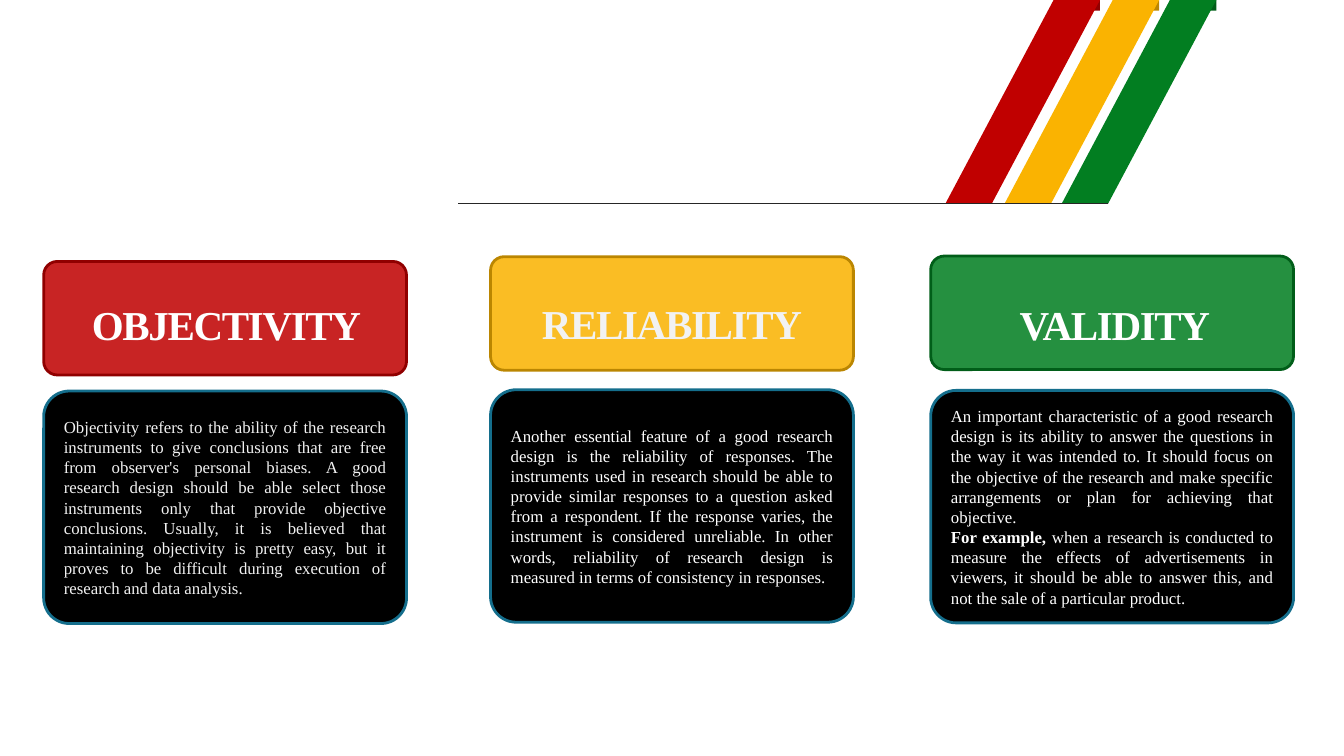
"""Build a slide on objectivity, reliability and validity in research design."""
from lxml import etree
from pptx import Presentation
from pptx.dml.color import RGBColor
from pptx.enum.shapes import MSO_CONNECTOR, MSO_SHAPE
from pptx.enum.text import MSO_ANCHOR, PP_ALIGN
from pptx.oxml.ns import qn
from pptx.util import Pt

RECT, ROUNDED = MSO_SHAPE.RECTANGLE, MSO_SHAPE.ROUNDED_RECTANGLE
STRAIGHT = MSO_CONNECTOR.STRAIGHT
MIDDLE, BOTTOM = MSO_ANCHOR.MIDDLE, MSO_ANCHOR.BOTTOM
CENTER, JUSTIFY = PP_ALIGN.CENTER, PP_ALIGN.JUSTIFY

FONT = "Times New Roman"
COLORS = {
    "red": "C00000", "dark_red": "900000",
    "yellow": "FAB301", "dark_yellow": "BB8601",
    "green": "027E21", "dark_green": "015E19",
    "black": "000000", "teal": "146E8C", "rule": "262626",
    "white": "FFFFFF", "pale": "F2F2F2",
}
CARD_W, HEADER_H, BODY_H = 388.8, 121.7, 249.1
RIBBON_W, RIBBON_H, BAND_W = 165.6, 218.2, 49.7
TAB_W, TAB_H = 8.6, 11.5

OBJECTIVITY = [[
    "Objectivity refers to the ability of the research instruments to give conclusions "
    "that are free from observer's personal biases. A good research design should be able "
    "select those instruments only that provide objective conclusions. Usually, it is "
    "believed that maintaining objectivity is pretty easy, but it proves to be difficult "
    "during execution of research and data analysis."]]
RELIABILITY = [[
    "Another essential feature of a good research design is the reliability of responses. "
    "The instruments used in research should be able to provide similar responses to a "
    "question asked from a respondent. If the response varies, the instrument is considered "
    "unreliable. In other words, reliability of research design is measured in terms of "
    "consistency in responses."]]
VALIDITY = [
    ["An important characteristic of a good research design is its ability to answer the "
     "questions in the way it was intended to. It should focus on the objective of the "
     "research and make specific arrangements or plan for achieving that objective."],
    ["For example,",
     " when a research is conducted to measure the effects of advertisements in viewers, "
     "it should be able to answer this, and not the sale of a particular product."]]

# title, paragraphs, colour, title colour, body colour, left, header top, body top, title box
CARDS = [
    ("OBJECTIVITY", OBJECTIVITY, "red", "white", "pale",
     46.8, 280.1, 419, (56.2, 285.8, 373)),
    ("RELIABILITY", RELIABILITY, "yellow", "pale", "white",
     525.6, 275, 417.6, (533.5, 285.1, 373)),
    ("VALIDITY", VALIDITY, "green", "white", "white",
     997.2, 274.3, 418.3, (997.2, 285.8, 394.6)),
]
RIBBONS = [("red", 1013), ("yellow", 1076.4), ("green", 1137.6)]


def rgb(name):
    """Return the named colour."""
    return RGBColor.from_string(COLORS[name])


def paint(sp, fill, line=None):
    """Give a shape a flat fill and an optional outline."""
    sp.shadow.inherit = False
    sp.fill.solid()
    sp.fill.fore_color.rgb = rgb(fill)
    if line:
        sp.line.color.rgb = rgb(line)
        sp.line.width = Pt(3)
    else:
        sp.line.fill.background()


def add_box(s, kind, left, top, width, height, fill, line=None):
    """Add a painted preset shape."""
    sp = s.shapes.add_shape(kind, Pt(left), Pt(top), Pt(width), Pt(height))
    paint(sp, fill, line)
    return sp


def style_run(r, size, color, bold=False):
    """Set the font of a run."""
    r.font.name = FONT
    r.font.size = Pt(size)
    r.font.bold = bold
    r.font.color.rgb = rgb(color)


def add_header(s, left, top, color):
    """Add the translucent rounded panel behind a title."""
    sp = add_box(s, ROUNDED, left, top, CARD_W, HEADER_H, color, "dark_" + color)
    sp.adjustments[0] = 0.12
    fill = sp._element.spPr.find(qn("a:solidFill"))
    etree.SubElement(fill[0], qn("a:alpha"), val="86000")


def add_body(s, left, top, paragraphs, color):
    """Add a black rounded panel with justified text."""
    sp = add_box(s, ROUNDED, left, top, CARD_W, BODY_H, "black", "teal")
    sp.adjustments[0] = 0.11
    tf = sp.text_frame
    tf.word_wrap = True
    tf.vertical_anchor = MIDDLE
    tf.margin_left = tf.margin_right = tf.margin_top = tf.margin_bottom = Pt(13.6)
    for i, runs in enumerate(paragraphs):
        p = tf.add_paragraph() if i else tf.paragraphs[0]
        p.alignment = JUSTIFY
        for j, text in enumerate(runs):
            r = p.add_run()
            r.text = text
            style_run(r, 18, color, bold=j < len(runs) - 1)


def add_title(s, left, top, width, text, color):
    """Add a tightly spaced bold title."""
    sp = s.shapes.add_textbox(Pt(left), Pt(top), Pt(width), Pt(91.4))
    tf = sp.text_frame
    tf.word_wrap = True
    tf.vertical_anchor = BOTTOM
    tf.text = text
    p = tf.paragraphs[0]
    p.alignment = CENTER
    p.line_spacing = Pt(72)
    r = p.runs[0]
    style_run(r, 44, color, bold=True)
    r.font._element.set("spc", "-150")


def add_ribbon(s, color, left):
    """Add a slanted band with its dark folded tab."""
    right = left + RIBBON_W
    add_box(s, RECT, right - TAB_W, 0, TAB_W, TAB_H, "dark_" + color)
    fb = s.shapes.build_freeform(Pt(left), Pt(RIBBON_H))
    corners = [(right - BAND_W, 0), (right, 0), (left + BAND_W, RIBBON_H)]
    fb.add_line_segments([(Pt(x), Pt(y)) for x, y in corners], close=True)
    paint(fb.convert_to_shape(), color)


def add_rule(s, x1, x2, y):
    """Add the thin horizontal rule under the ribbons."""
    line = s.shapes.add_connector(STRAIGHT, Pt(x1), Pt(y), Pt(x2), Pt(y))
    line.line.color.rgb = rgb("rule")
    line.line.width = Pt(1)
    etree.SubElement(line._element.spPr, qn("a:effectLst"))


def main():
    """Build and save the slide."""
    prs = Presentation()
    prs.slide_width, prs.slide_height = Pt(1440), Pt(810)
    s = prs.slides.add_slide(prs.slide_layouts[6])
    for title, paragraphs, color, title_color, body_color, left, top, body_top, box in CARDS:
        add_header(s, left, top, color)
        add_body(s, left, body_top, paragraphs, body_color)
        add_title(s, *box, title, title_color)
    for color, left in RIBBONS:
        add_ribbon(s, color, left)
    add_rule(s, 1187.3, 490.3, 217.8)
    prs.save("out.pptx")


if __name__ == "__main__":
    main()
